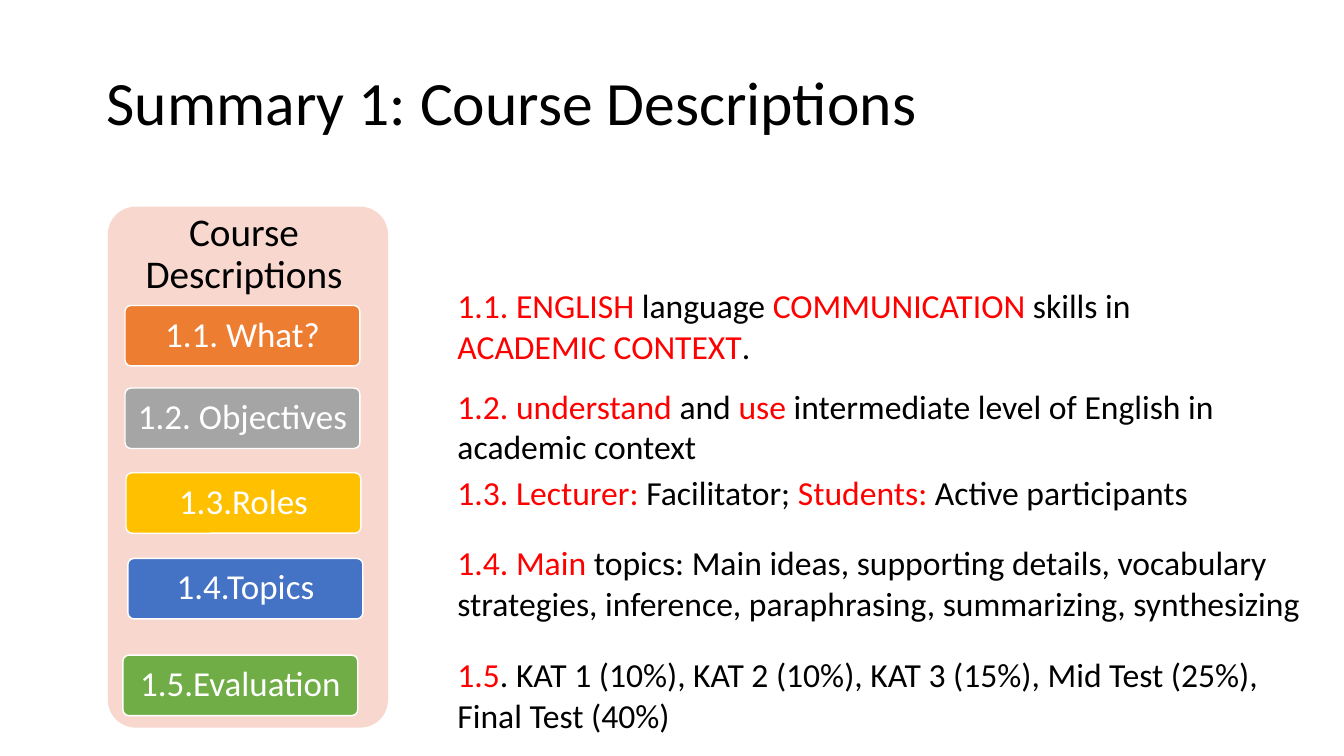
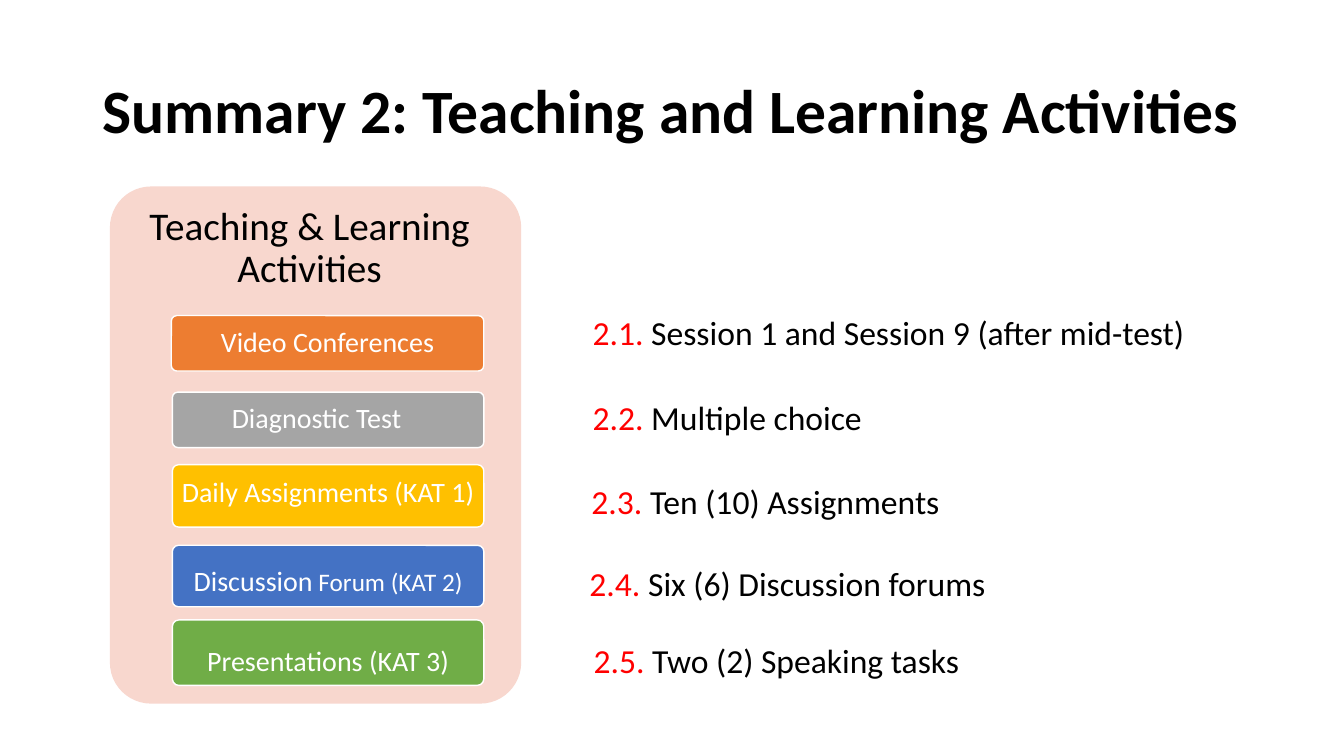
"""Build two summary slides that pair coloured topic buttons with notes."""
from itertools import cycle

from pptx import Presentation
from pptx.dml.color import RGBColor
from pptx.enum.shapes import MSO_SHAPE as Shape
from pptx.enum.text import MSO_ANCHOR as Anchor, MSO_AUTO_SIZE as Auto, PP_ALIGN as Align
from pptx.util import Pt

BLACK = RGBColor(0x00, 0x00, 0x00)
WHITE = RGBColor(0xFF, 0xFF, 0xFF)
RED = RGBColor(0xFF, 0x00, 0x00)
PINK = RGBColor(0xF8, 0xD7, 0xCE)
ORANGE = RGBColor(0xED, 0x7D, 0x31)
GREY = RGBColor(0xA5, 0xA5, 0xA5)
GOLD = RGBColor(0xFF, 0xC0, 0x00)
BLUE = RGBColor(0x44, 0x72, 0xC4)
GREEN = RGBColor(0x70, 0xAD, 0x47)
HUES = (ORANGE, GREY, GOLD, BLUE, GREEN)

FONT = "Calibri"
FRAME = {"word_wrap": True, "auto_size": Auto.NONE, "vertical_anchor": Anchor.MIDDLE}
TIGHT = {"line_spacing": 0.9, "space_before": Pt(0)}
CENTER = {**TIGHT, "alignment": Align.CENTER}
LEFT = {**TIGHT, "alignment": Align.LEFT}

COURSE = {
    "title": ("Summary 1: Course Descriptions", 69, 23, False),
    "panel": (77, 147.6, 200.2, 372.2),
    "head": ("Course Descriptions", 71.3, 149, 206, 65.5),
    "inset": 5,
    "buttons": [
        ((89.3, 218.2, 167.8, 43.2), [("1.1. What?", 25)], {}),
        ((89.3, 277.2, 167.8, 43.2), [("1.2. Objectives", 25)], {}),
        ((90, 337.7, 167.8, 43.2), [("1.3.Roles", 25)], {}),
        ((91.4, 398.9, 167.8, 43.2), [("1.4.Topics", 25)], {}),
        ((87.8, 468, 167.8, 43.2), [("1.5.Evaluation", 25)], {}),
    ],
    "indent": 8.6,
    "notes": [
        ((311, 200.2, 586, 65.5),
         ["1.1. ENGLISH ", "language", " COMMUNICATION ", "skills in ", "ACADEMIC CONTEXT", "."]),
        ((311, 272.2, 630, 65.5),
         ["1.2. understand", " and ", "use",
          " intermediate level of English in academic context"]),
        ((311, 333.4, 577.4, 36),
         ["1.3. Lecturer: ", "Facilitator; ", "Students: ", "Active participants"]),
        ((311, 383.8, 630, 65.5),
         ["1.4. Main ", "topics: Main ideas, supporting details, vocabulary strategies, "
          "inference, paraphrasing, summarizing, synthesizing"]),
        ((311, 463.7, 612, 65.5),
         ["1.5", ". KAT 1 (10%), KAT 2 (10%), KAT 3 (15%), Mid Test (25%), Final Test (40%)"]),
    ],
}

TASKS = {
    "title": ("Summary 2: Teaching and Learning Activities", 66.2, 28.8, True),
    "panel": (78.5, 133.2, 293.8, 369.4),
    "head": ("Teaching & Learning Activities", 81.4, 130.3, 279.4, 94.3),
    "inset": 2.5,
    "buttons": [
        ((122.4, 225.4, 223.2, 39.6), [("Video Conferences", 20)], {}),
        ((123.1, 280.1, 222.5, 39.6), [("Diagnostic Test", 20)], {"margin_right": Pt(19)}),
        ((123.1, 331.9, 222.5, 44.6), [("Daily Assignments (KAT 1)", 20)],
         {"margin_bottom": Pt(6)}),
        ((123.1, 389.5, 222.5, 43.9), [("Discussion", 20), (" Forum (KAT 2)", 18)],
         {"margin_top": Pt(12)}),
        ((123.1, 442.8, 222.5, 46.8), [("Presentations (KAT 3)", 20)],
         {"margin_top": Pt(16)}),
    ],
    "indent": 0,
    "notes": [
        ((416.2, 219.6, 453.6, 36), ["2.1.", " Session 1 and Session 9 (after mid-test)"]),
        ((416.2, 280.1, 429.1, 36), ["2.2. ", "Multiple choice"]),
        ((415.4, 339.8, 429.1, 36), ["2.3.", " Ten (10) Assignments"]),
        ((414, 398.2, 429.1, 36), ["2.4. ", "Six (6) Discussion forums"]),
        ((416.9, 453.6, 429.1, 36), ["2.5. ", "Two (2) Speaking tasks"]),
    ],
}


def apply(item, values):
    """Set each named attribute of an item."""
    for name, value in values.items():
        setattr(item, name, value)


def pads(size):
    """Give the same inset for all four sides."""
    return {f"margin_{side}": Pt(size) for side in ("left", "top", "right", "bottom")}


def place(box):
    """Turn a box of numbers into point lengths."""
    return [Pt(n) for n in box]


def write(shape, runs, frame, para):
    """Fill a shape with one paragraph of (text, size, colour, bold) runs."""
    text = shape.text_frame
    apply(text, {**FRAME, **frame})
    line = text.paragraphs[0]
    apply(line, para)
    for words, size, color, bold in runs:
        run = line.add_run()
        run.text = words
        apply(run.font, {"name": FONT, "size": Pt(size), "bold": bold})
        run.font.color.rgb = color


def add_title(slide, words, left, top, bold):
    """Move and fill the title placeholder."""
    title = slide.shapes.title
    apply(title, dict(zip(("left", "top", "width", "height"),
                          place((left, top, 828, 104.4)))))
    write(title, [(words, 44, BLACK, bold)], {}, LEFT)


def add_card(slide, box, fill, edge=None):
    """Draw a rounded card, with an edge if one is given."""
    card = slide.shapes.add_shape(Shape.ROUNDED_RECTANGLE, *place(box))
    card.shadow.inherit = False
    card.adjustments[0] = 0.1
    card.fill.solid()
    card.fill.fore_color.rgb = fill
    if edge is None:
        card.line.fill.background()
    else:
        card.line.color.rgb = edge
        card.line.width = Pt(1)
    return card


def add_head(slide, words, *box):
    """Put the heading on the panel."""
    head = slide.shapes.add_textbox(*place(box))
    write(head, [(words, 28, BLACK, False)], pads(10.7), CENTER)


def add_note(slide, box, parts, indent):
    """Add a note whose parts alternate between red and black."""
    note = slide.shapes.add_textbox(*place(box))
    runs = [(part, 24, color, False) for part, color in zip(parts, cycle((RED, BLACK)))]
    frame = {"vertical_anchor": Anchor.TOP, "margin_left": Pt(7.2 + indent)}
    write(note, runs, frame, {"alignment": Align.LEFT})


def add_page(deck, data):
    """Build one summary slide."""
    slide = deck.slides.add_slide(deck.slide_layouts[5])
    add_title(slide, *data["title"])
    add_card(slide, data["panel"], PINK)
    add_head(slide, *data["head"])
    for (box, parts, shift), hue in zip(data["buttons"], HUES):
        card = add_card(slide, box, hue, WHITE)
        runs = [(words, size, WHITE, False) for words, size in parts]
        write(card, runs, {**pads(data["inset"]), **shift}, CENTER)
    for box, parts in data["notes"]:
        add_note(slide, box, parts, data["indent"])


def main():
    """Build and save the deck."""
    deck = Presentation()
    apply(deck, {"slide_width": Pt(960), "slide_height": Pt(540)})
    for data in (COURSE, TASKS):
        add_page(deck, data)
    deck.save("out.pptx")


if __name__ == "__main__":
    main()
